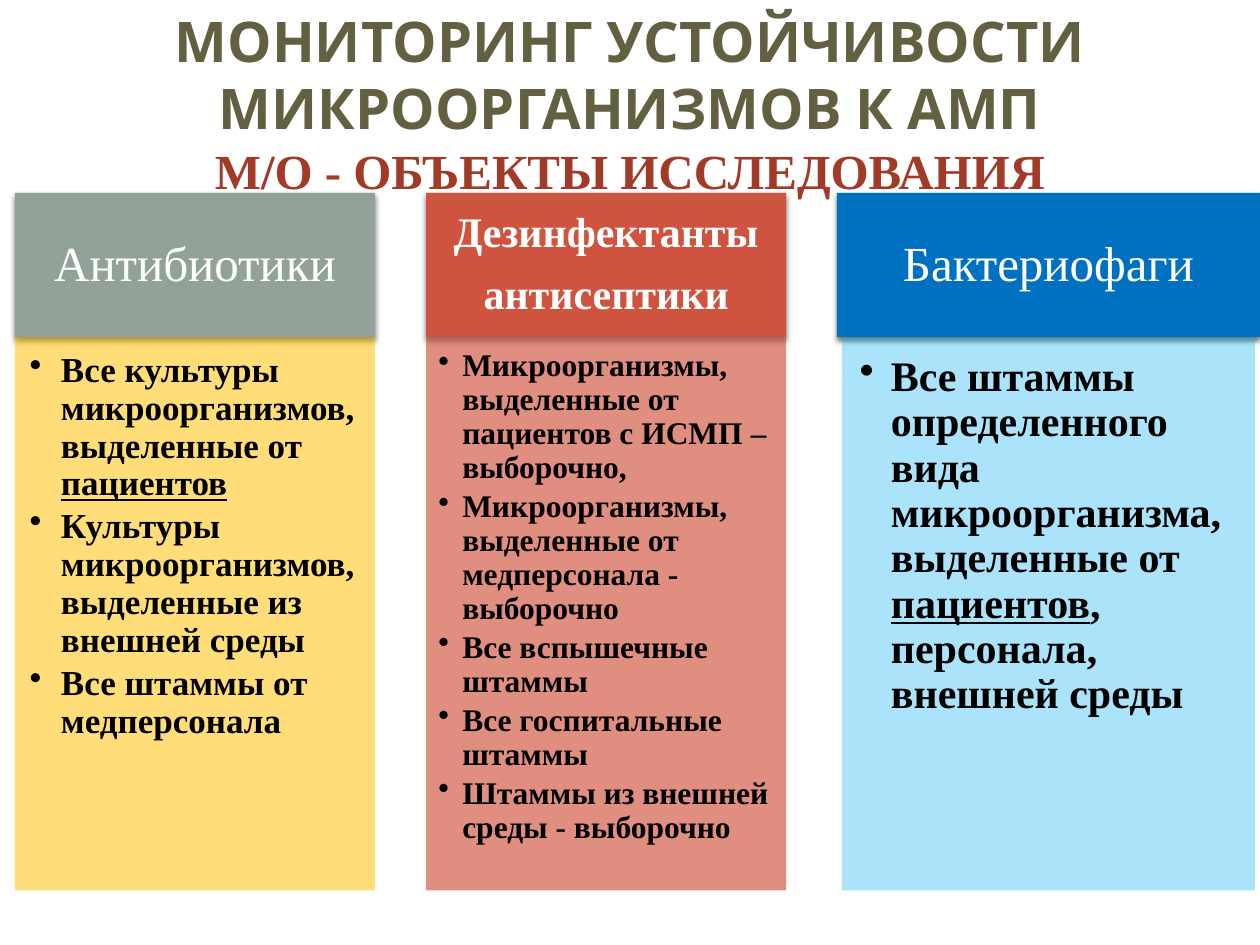
import pptx
import pptx.dml.color
import pptx.enum.shapes
import pptx.enum.text
import pptx.oxml
import pptx.oxml.ns
import pptx.util
from lxml import etree

Cm, Pt = pptx.util.Cm, pptx.util.Pt
ALIGN = pptx.enum.text.PP_ALIGN
ANCHOR = pptx.enum.text.MSO_ANCHOR
SERIF = "Times New Roman"
HEADING_HEIGHT = 2.91
COLUMN_TOP, COLUMN_HEIGHT = 3.89, 14.06

# Underscores enclose underlined words
COLUMNS = [
    dict(left=0.3, width=7.26, side=0, heading=["Антибиотики"],
         heading_size=28, heading_bold=False, heading_fill="93A299",
         body_fill="FFC000", alpha=52, size=20, inset=0.3, indent=0.63,
         items=["Все культуры микроорганизмов, выделенные от _пациентов_",
                "Культуры микроорганизмов, выделенные из внешней среды",
                "Все штаммы от медперсонала"]),
    dict(left=8.59, width=7.26, side=0, heading=["Дезинфектанты", "антисептики"],
         heading_size=24, heading_bold=True, heading_fill="CF543F",
         body_fill="CF543F", alpha=66, size=18, inset=0.25, indent=0.48,
         items=["Микроорганизмы, выделенные от пациентов с ИСМП – выборочно,",
                "Микроорганизмы, выделенные от медперсонала - выборочно",
                "Все вспышечные штаммы",
                "Все госпитальные штаммы",
                "Штаммы из внешней среды - выборочно"]),
    dict(left=16.87, width=8.53, side=0.1, heading=["Бактериофаги"],
         heading_size=28, heading_bold=False, heading_fill="0070C0",
         body_fill="00B0F0", alpha=33, size=24, inset=0.36, indent=0.63,
         items=["Все штаммы определенного вида микроорганизма, выделенные от "
                "_пациентов_, персонала, внешней среды"]),
]


def colour(value):
    return pptx.dml.color.RGBColor.from_string(value)


def style(run, size, value, bold, font=SERIF):
    run.font.name = font
    run.font.size = Pt(size)
    run.font.bold = bold
    run.font.color.rgb = colour(value)


def set_insets(frame, left, top, right, bottom):
    frame.margin_left, frame.margin_top = Cm(left), Cm(top)
    frame.margin_right, frame.margin_bottom = Cm(right), Cm(bottom)


def add_panel(slide, left, top, width, height, fill):
    panel = slide.shapes.add_shape(pptx.enum.shapes.MSO_SHAPE.RECTANGLE,
                                   Cm(left), Cm(top), Cm(width), Cm(height))
    panel.shadow.inherit = False
    panel.fill.solid()
    panel.fill.fore_color.rgb = colour(fill)
    panel.line.fill.background()
    panel.text_frame.word_wrap = True
    return panel


def add_shadow(shape):
    effects = shape._element.spPr.find(pptx.oxml.ns.qn("a:effectLst"))
    effects.append(pptx.oxml.parse_xml(
        f'<a:outerShdw {pptx.oxml.ns.nsdecls("a")} blurRad="{Pt(3.1)}" dist="{Pt(2)}" '
        'dir="5400000" rotWithShape="0"><a:srgbClr val="5B645E">'
        '<a:alpha val="83000"/></a:srgbClr></a:outerShdw>'))


def set_alpha(shape, percent):
    rgb = shape._element.spPr.find(".//" + pptx.oxml.ns.qn("a:srgbClr"))
    etree.SubElement(rgb, pptx.oxml.ns.qn("a:alpha"), val=str(percent * 1000))


def add_bullet(paragraph, indent):
    properties = paragraph._p.get_or_add_pPr()
    properties.set("marL", str(Cm(indent)))
    properties.set("indent", str(-Cm(indent)))
    etree.SubElement(properties, pptx.oxml.ns.qn("a:buChar"), char="•")


def add_heading(slide, left, top, width, height, column):
    heading = add_panel(slide, left, top, width, height, column["heading_fill"])
    add_shadow(heading)
    frame = heading.text_frame
    frame.vertical_anchor = ANCHOR.MIDDLE
    set_insets(frame, 0.5, 0.3, 0.5, 0.3)
    frame.text = "\n".join(column["heading"])
    for paragraph in frame.paragraphs:
        paragraph.alignment = ALIGN.CENTER
        paragraph.line_spacing = 0.9
        paragraph.space_after = Pt(9.8)
        style(paragraph.runs[0], column["heading_size"], "FFFFFF", column["heading_bold"])


def add_body(slide, left, top, width, height, column):
    body = add_panel(slide, left, top, width, height, column["body_fill"])
    set_alpha(body, column["alpha"])
    frame = body.text_frame
    frame.vertical_anchor = ANCHOR.TOP
    inset = column["inset"]
    set_insets(frame, inset, inset, inset * 4 / 3, inset * 1.5)
    for number, item in enumerate(column["items"]):
        paragraph = frame.add_paragraph() if number else frame.paragraphs[0]
        add_bullet(paragraph, column["indent"])
        paragraph.level = 1
        paragraph.alignment = ALIGN.LEFT
        paragraph.line_spacing = 0.9
        paragraph.space_after = Pt(column["size"] * 0.15)
        for part, text in enumerate(item.split("_")):
            if text:
                run = paragraph.add_run()
                run.text = text
                style(run, column["size"], "000000", True)
                run.font.underline = part % 2 == 1


def add_column(slide, left, top, width, height, column):
    side = column["side"]
    add_heading(slide, left, top, width, HEADING_HEIGHT, column)
    add_body(slide, left + side, top + HEADING_HEIGHT, width - 2 * side,
             height - HEADING_HEIGHT, column)


def place_title(slide, left, top, width, height):
    title = slide.shapes.title
    title.left, title.top, title.width, title.height = Cm(left), Cm(top), Cm(width), Cm(height)
    frame = title.text_frame
    frame.word_wrap = True
    frame.auto_size = pptx.enum.text.MSO_AUTO_SIZE.NONE
    frame.vertical_anchor = ANCHOR.TOP
    set_insets(frame, 0.25, 0.13, 0.25, 0.13)
    frame.text = "МОНИТОРИНГ УСТОЙЧИВОСТИ МИКРООРГАНИЗМОВ К АМП\nМ/О - ОБЪЕКТЫ ИССЛЕДОВАНИЯ"
    topic, subject = frame.paragraphs
    for paragraph in (topic, subject):
        paragraph.alignment = ALIGN.CENTER
        paragraph.space_before = Pt(0)
    style(topic.runs[0], 32, "636042", True, "Karla")
    style(subject.runs[0], 28, "A23A28", True)
    # The title lies in front of the headings it touches
    slide.shapes._spTree.append(title._element)


def main():
    presentation = pptx.Presentation()
    presentation.slide_width, presentation.slide_height = Cm(25.4), Cm(19.05)
    slide = presentation.slides.add_slide(presentation.slide_layouts[5])

    # Three columns of study objects
    for column in COLUMNS:
        add_column(slide, column["left"], COLUMN_TOP, column["width"], COLUMN_HEIGHT, column)

    # Title
    place_title(slide, 0, 0, 25.4, 4.19)
    presentation.save("out.pptx")


if __name__ == "__main__":
    main()
